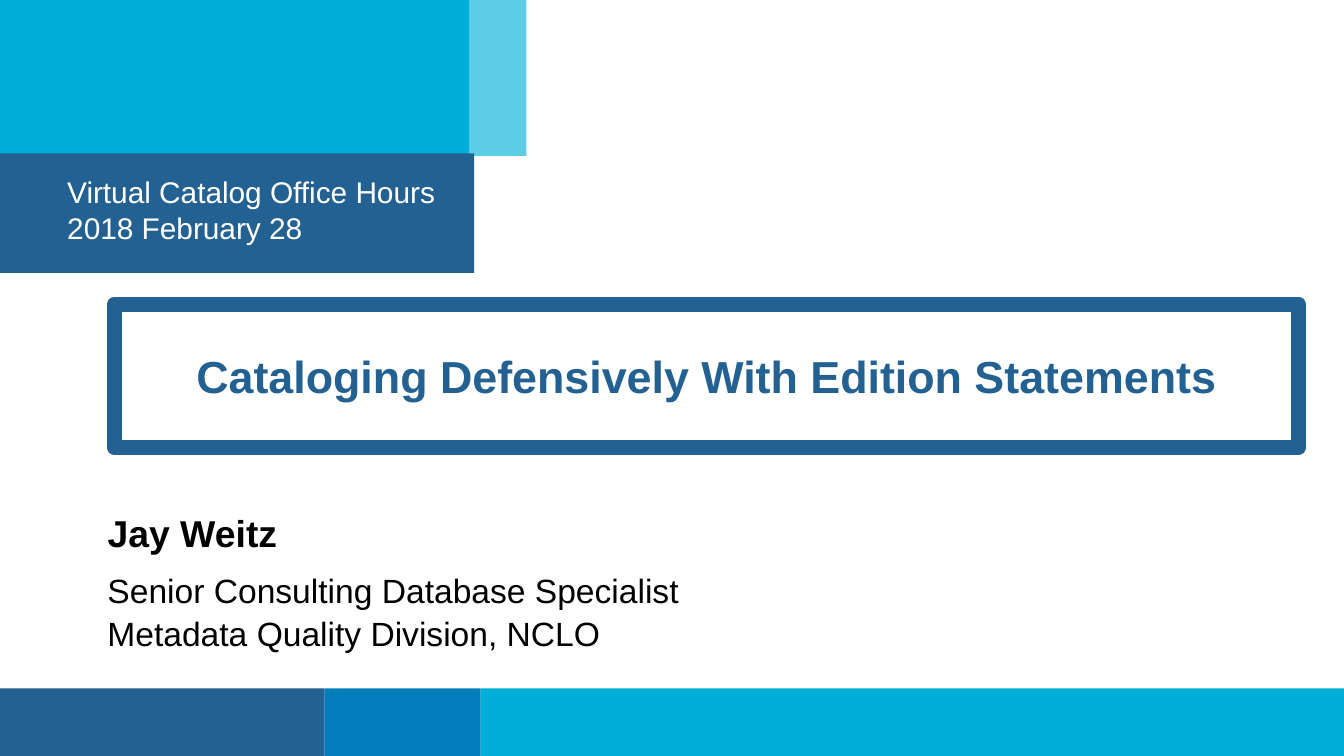
from pptx import Presentation
from pptx.dml.color import RGBColor
from pptx.enum.shapes import MSO_SHAPE
from pptx.enum.text import MSO_ANCHOR, PP_ALIGN
from pptx.oxml.ns import qn
from pptx.util import Pt
from lxml import etree

RECT = MSO_SHAPE.RECTANGLE
TOP, MIDDLE = MSO_ANCHOR.TOP, MSO_ANCHOR.MIDDLE
LEFT, CENTER = PP_ALIGN.LEFT, PP_ALIGN.CENTER
FONT = "Arial"
NAVY, BLUE, CYAN = "236192", "007DBA", "00AFD7"
WHITE, BLACK = "FFFFFF", "000000"
SLIDE_W, SLIDE_H = 720, 405

# Content
TITLE = "Cataloging Defensively With Edition Statements"
EVENT = ["Virtual Catalog Office Hours", "2018 February 28"]
SPEAKER = ["Jay Weitz"]
ROLE = ["Senior Consulting Database Specialist", "Metadata Quality Division, NCLO"]

# Footer bands: right edge, colour
FOOTER_TOP = 368.8
FOOTER = [(174, NAVY), (257.5, BLUE), (SLIDE_W, CYAN)]

# Header blocks: left, top, width, height, colour, opacity in percent
HEADER = [
    (0, 0, 251.3, 83.5, CYAN, 100),
    (247, 0, 35, 83.5, CYAN, 63),
]


def rgb(value):
    return RGBColor.from_string(value)


def add_block(left, top, width, height, color, opacity=100):
    sp = s.shapes.add_shape(RECT, Pt(left), Pt(top), Pt(width), Pt(height))
    sp.shadow.inherit = False
    sp.fill.solid()
    sp.fill.fore_color.rgb = rgb(color)
    sp.line.fill.background()
    if opacity < 100:
        clr = sp.fill._xPr.find(".//" + qn("a:srgbClr"))
        etree.SubElement(clr, qn("a:alpha"), val=str(opacity * 1000))
    return sp


def add_text_box(left, top, width, height):
    return s.shapes.add_textbox(Pt(left), Pt(top), Pt(width), Pt(height))


def write(sp, lines, size, color, insets, bold=False, align=LEFT,
          anchor=TOP, wrap=False, spacing=1.0, before=0):
    tf = sp.text_frame
    tf.word_wrap = wrap
    tf.vertical_anchor = anchor
    tf.margin_left, tf.margin_top, tf.margin_right, tf.margin_bottom = map(Pt, insets)
    for i, line in enumerate(lines):
        p = tf.add_paragraph() if i else tf.paragraphs[0]
        p.alignment = align
        p.line_spacing = spacing
        p.space_before = Pt(before)
        r = p.add_run()
        r.text = line
        r.font.name = FONT
        r.font.size = Pt(size)
        r.font.bold = bold
        r.font.color.rgb = rgb(color)


prs = Presentation()
prs.slide_width, prs.slide_height = Pt(SLIDE_W), Pt(SLIDE_H)
s = prs.slides.add_slide(prs.slide_layouts[5])

# Footer bands, each starting where the last one ends
left = 0
for right, color in FOOTER:
    add_block(left, FOOTER_TOP, right - left, SLIDE_H - FOOTER_TOP, color)
    left = right

# Header blocks and event banner
for block in HEADER:
    add_block(*block)
banner = add_block(0, 82.2, 254, 64, NAVY)
write(banner, EVENT, 16, WHITE, (36, 10.8, 21.6, 14.4), anchor=MIDDLE)

# Framed title
title = s.shapes.title
title.left, title.top, title.width, title.height = Pt(61.2), Pt(163), Pt(634.4), Pt(76.8)
title.line.color.rgb = rgb(NAVY)
title.line.width = Pt(8)
write(title, [TITLE], 24, NAVY, (36, 21.6, 36, 21.6), bold=True,
      align=CENTER, anchor=MIDDLE, wrap=True)

# Speaker and role
write(add_text_box(57.6, 269.5, 146, 31.5), SPEAKER, 20, BLACK,
      (0, 3.6, 7.2, 3.6), bold=True, before=4)
write(add_text_box(57.6, 308, 324, 47.8), ROLE, 18, BLACK,
      (0, 0, 7.2, 3.6), spacing=0.9, before=3.6)

prs.save("out.pptx")
